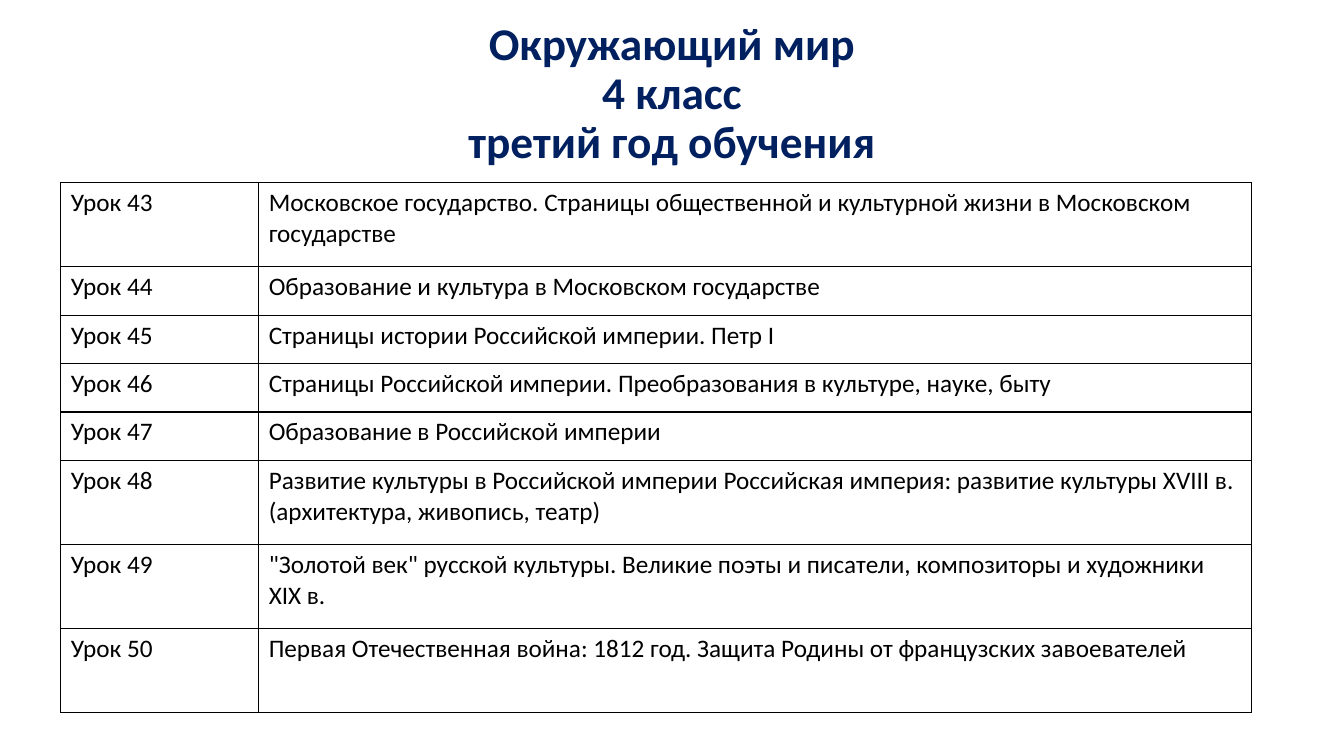
from lxml.etree import SubElement
from pptx import Presentation
from pptx.dml.color import RGBColor
from pptx.enum.text import MSO_ANCHOR, PP_ALIGN
from pptx.oxml.ns import qn
from pptx.util import Cm, Pt

COLORS = {"title": "002060", "text": "000000", "border": "000000"}
FONT = "Calibri"
TALL, SHORT = 2.12, 1.22

LESSONS = [
    ("Московское государство. Страницы общественной и культурной жизни в Московском государстве", TALL),
    ("Образование и культура в Московском государстве", SHORT),
    ("Страницы истории Российской империи. Петр I", SHORT),
    ("Страницы Российской империи. Преобразования в культуре, науке, быту", SHORT),
    ("Образование в Российской империи", SHORT),
    ("Развитие культуры в Российской империи Российская империя: "
     "развитие культуры XVIII в. (архитектура, живопись, театр)", TALL),
    ('"Золотой век" русской культуры. Великие поэты и писатели, композиторы и художники XIX в.', TALL),
    ("Первая Отечественная война: 1812 год. Защита Родины от французских завоевателей", TALL),
]
FIRST_LESSON = 43


def format_runs(paragraph, size, color, bold=False):
    for run in paragraph.runs:
        run.font.name = FONT
        run.font.size = Pt(size)
        run.font.bold = bold
        run.font.color.rgb = RGBColor.from_string(COLORS[color])


def add_borders(cell):
    """Draw a thin solid line on all four sides of a table cell."""
    properties = cell._tc.get_or_add_tcPr()
    for position, side in enumerate(("a:lnL", "a:lnR", "a:lnT", "a:lnB")):
        line = SubElement(properties, qn(side), w=str(Pt(1)))
        fill = SubElement(line, qn("a:solidFill"))
        SubElement(fill, qn("a:srgbClr"), val=COLORS["border"])
        properties.insert(position, line)


presentation = Presentation()
presentation.slide_width = Cm(33.87)
presentation.slide_height = Cm(19.05)
slide = presentation.slides.add_slide(presentation.slide_layouts[6])

# Title
title = slide.shapes.add_textbox(Cm(2.33), Cm(0.34), Cm(29.21), Cm(4.08))
title_frame = title.text_frame
title_frame.word_wrap = True
title_frame.vertical_anchor = MSO_ANCHOR.MIDDLE
title_frame.text = "Окружающий мир\v4 класс\vтретий год обучения"
heading = title_frame.paragraphs[0]
heading.alignment = PP_ALIGN.CENTER
heading.line_spacing = 0.9
format_runs(heading, 32.4, "title", bold=True)

# Lesson table
table_height = sum(height for topic, height in LESSONS)
table = slide.shapes.add_table(
    len(LESSONS), 2, Cm(1.53), Cm(4.6), Cm(30.01), Cm(table_height)
).table
table.first_row = False
table.horz_banding = False
table.columns[0].width = Cm(4.99)
table.columns[1].width = Cm(25.02)

for index, (topic, height) in enumerate(LESSONS):
    table.rows[index].height = Cm(height)
    for column, text in enumerate((f"Урок {FIRST_LESSON + index}", topic)):
        cell = table.cell(index, column)
        cell.fill.background()
        add_borders(cell)
        cell.text_frame.text = text
        format_runs(cell.text_frame.paragraphs[0], 18, "text")

presentation.save("out.pptx")
